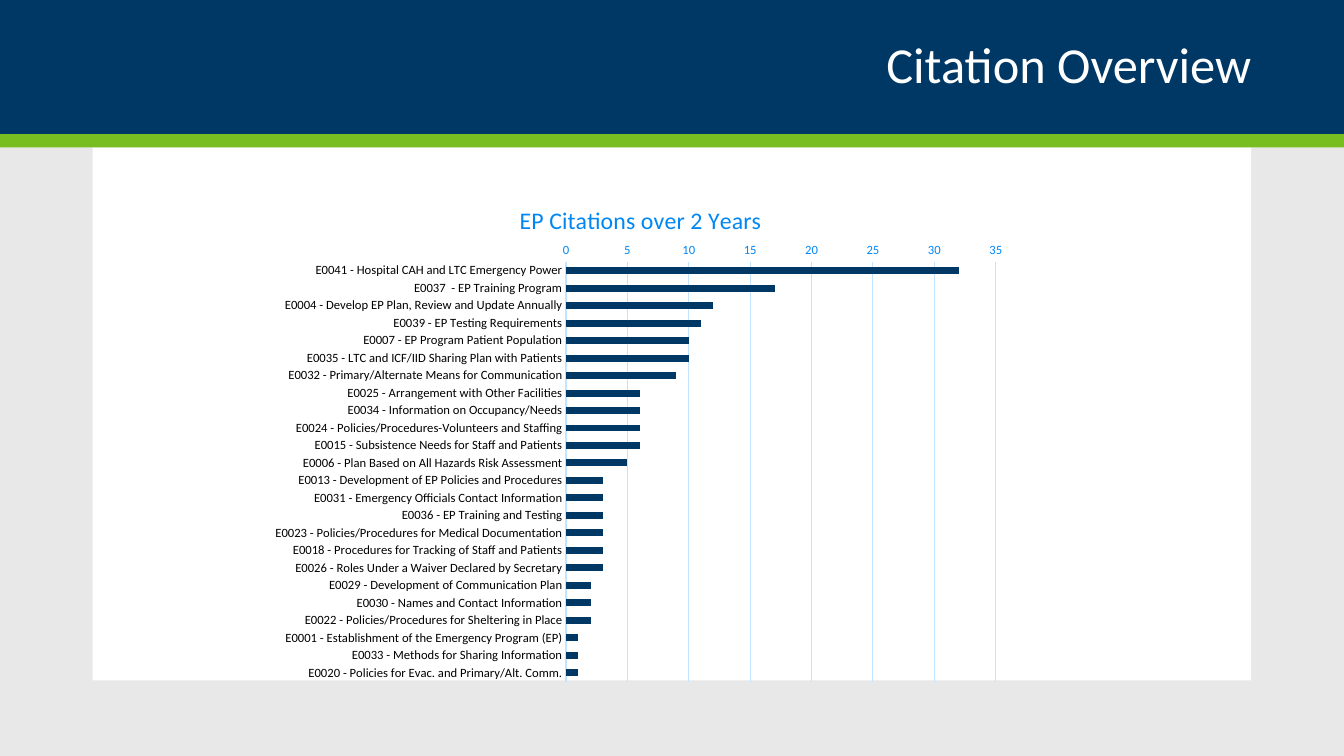
import lxml.etree
import pptx
import pptx.chart.data
import pptx.dml.color
import pptx.enum.chart
import pptx.enum.shapes
import pptx.enum.text
import pptx.oxml.ns
import pptx.util

WIDTH = pptx.util.Inches(13.33)
HEIGHT = pptx.util.Inches(7.5)
FONT = "Calibri"
COLOURS = {
    "background": "E8E8E8",
    "navy": "003865",
    "green": "78BE21",
    "white": "FFFFFF",
    "black": "000000",
    "blue": "0087F4",
    "grid": "C2E4FF",
}
CITATIONS = [
    ("E0041 - Hospital CAH and LTC Emergency Power", 32),
    ("E0037  - EP Training Program", 17),
    ("E0004 - Develop EP Plan, Review and Update Annually", 12),
    ("E0039 - EP Testing Requirements", 11),
    ("E0007 - EP Program Patient Population", 10),
    ("E0035 - LTC and ICF/IID Sharing Plan with Patients", 10),
    ("E0032 - Primary/Alternate Means for Communication", 9),
    ("E0025 - Arrangement with Other Facilities", 6),
    ("E0034 - Information on Occupancy/Needs", 6),
    ("E0024 - Policies/Procedures-Volunteers and Staffing", 6),
    ("E0015 - Subsistence Needs for Staff and Patients", 6),
    ("E0006 - Plan Based on All Hazards Risk Assessment", 5),
    ("E0013 - Development of EP Policies and Procedures", 3),
    ("E0031 - Emergency Officials Contact Information", 3),
    ("E0036 - EP Training and Testing", 3),
    ("E0023 - Policies/Procedures for Medical Documentation", 3),
    ("E0018 - Procedures for Tracking of Staff and Patients", 3),
    ("E0026 - Roles Under a Waiver Declared by Secretary", 3),
    ("E0029 - Development of Communication Plan", 2),
    ("E0030 - Names and Contact Information", 2),
    ("E0022 - Policies/Procedures for Sheltering in Place", 2),
    ("E0001 - Establishment of the Emergency Program (EP)", 1),
    ("E0033 - Methods for Sharing Information", 1),
    ("E0020 - Policies for Evac. and Primary/Alt. Comm.", 1),
]


def colour(name):
    return pptx.dml.color.RGBColor.from_string(COLOURS[name])


def apply_format(target, **values):
    for name, value in values.items():
        setattr(target, name, value)


def format_font(font, size, colour_name):
    apply_format(font, name=FONT, size=pptx.util.Pt(size), bold=False)
    font.color.rgb = colour(colour_name)


def box(left, top, width, height):
    return {
        "left": round(WIDTH * left),
        "top": round(HEIGHT * top),
        "width": round(WIDTH * width),
        "height": round(HEIGHT * height),
    }


def add_panel(slide, area, colour_name):
    shape = slide.shapes.add_shape(
        pptx.enum.shapes.MSO_SHAPE.RECTANGLE, **area
    )
    shape.shadow.inherit = False
    shape.fill.solid()
    shape.fill.fore_color.rgb = colour(colour_name)
    shape.line.fill.background()


def add_title(slide, text, area):
    title = slide.shapes.title
    slide.shapes._spTree.append(title._element)
    apply_format(title, **area)
    frame = title.text_frame
    frame.text = text
    apply_format(
        frame,
        margin_left=0,
        margin_right=0,
        word_wrap=True,
        vertical_anchor=pptx.enum.text.MSO_ANCHOR.MIDDLE,
    )
    paragraph = frame.paragraphs[0]
    apply_format(
        paragraph, alignment=pptx.enum.text.PP_ALIGN.RIGHT, line_spacing=0.9
    )
    format_font(paragraph.runs[0].font, 36, "white")


def set_layout(element, index, values):
    tag = pptx.oxml.ns.qn
    for previous in element.findall(tag("c:layout")):
        element.remove(previous)
    layout = lxml.etree.Element(tag("c:layout"))
    manual = lxml.etree.SubElement(layout, tag("c:manualLayout"))
    for name, value in values.items():
        lxml.etree.SubElement(manual, tag("c:" + name)).set("val", str(value))
    element.insert(index, layout)


def format_axis(axis, colour_name):
    apply_format(
        axis,
        major_tick_mark=pptx.enum.chart.XL_TICK_MARK.NONE,
        minor_tick_mark=pptx.enum.chart.XL_TICK_MARK.NONE,
    )
    axis.format.line.fill.background()
    format_font(axis.tick_labels.font, 9, colour_name)


def add_citation_chart(slide, title, citations, area):
    data = pptx.chart.data.CategoryChartData()
    data.categories = [name for name, count in citations]
    data.add_series("Series 1", [count for name, count in citations])
    kind = pptx.enum.chart.XL_CHART_TYPE.BAR_STACKED
    chart = slide.shapes.add_chart(
        kind, area["left"], area["top"], area["width"], area["height"], data
    ).chart
    apply_format(chart, has_legend=False, has_title=True)
    format_font(chart.font, 10, "navy")

    chart.chart_title.text_frame.text = title
    run = chart.chart_title.text_frame.paragraphs[0].runs[0]
    format_font(run.font, 17, "blue")
    set_layout(
        chart.chart_title._element,
        1,
        {"xMode": "edge", "yMode": "edge", "x": 0.34, "y": 0.05},
    )

    format_axis(chart.category_axis, "black")
    chart.category_axis.reverse_order = True
    chart.category_axis.has_major_gridlines = False
    format_axis(chart.value_axis, "blue")
    apply_format(
        chart.value_axis,
        minimum_scale=0,
        maximum_scale=35,
        major_unit=5,
        has_major_gridlines=True,
    )
    grid_line = chart.value_axis.major_gridlines.format.line
    grid_line.color.rgb = colour("grid")
    grid_line.width = pptx.util.Pt(0.75)

    plot = chart.plots[0]
    apply_format(plot, gap_width=150, overlap=100, vary_by_categories=False)
    bars = plot.series[0].format.fill
    bars.solid()
    bars.fore_color.rgb = colour("navy")
    set_layout(
        chart._chartSpace.chart.plotArea,
        0,
        {
            "layoutTarget": "inner",
            "xMode": "edge",
            "yMode": "edge",
            "x": 0.407,
            "y": 0.172,
            "w": 0.568,
            "h": 0.813,
        },
    )


def main():
    presentation = pptx.Presentation()
    apply_format(presentation, slide_width=WIDTH, slide_height=HEIGHT)
    slide = presentation.slides.add_slide(presentation.slide_layouts[5])
    slide.background.fill.solid()
    slide.background.fill.fore_color.rgb = colour("background")

    margin, header, stripe = 0.069, 0.1775, 0.0175
    content = 1 - 2 * margin
    add_panel(slide, box(0, 0, 1, header), "navy")
    add_panel(slide, box(margin, header + stripe, content, 0.705), "white")
    add_panel(slide, box(0, header, 1, stripe), "green")
    add_title(slide, "Citation Overview", box(margin, 0, content, header))
    add_citation_chart(
        slide,
        "EP Citations over 2 Years",
        CITATIONS,
        box(0.192, 0.229, 0.563, 0.683),
    )
    presentation.save("out.pptx")


if __name__ == "__main__":
    main()
